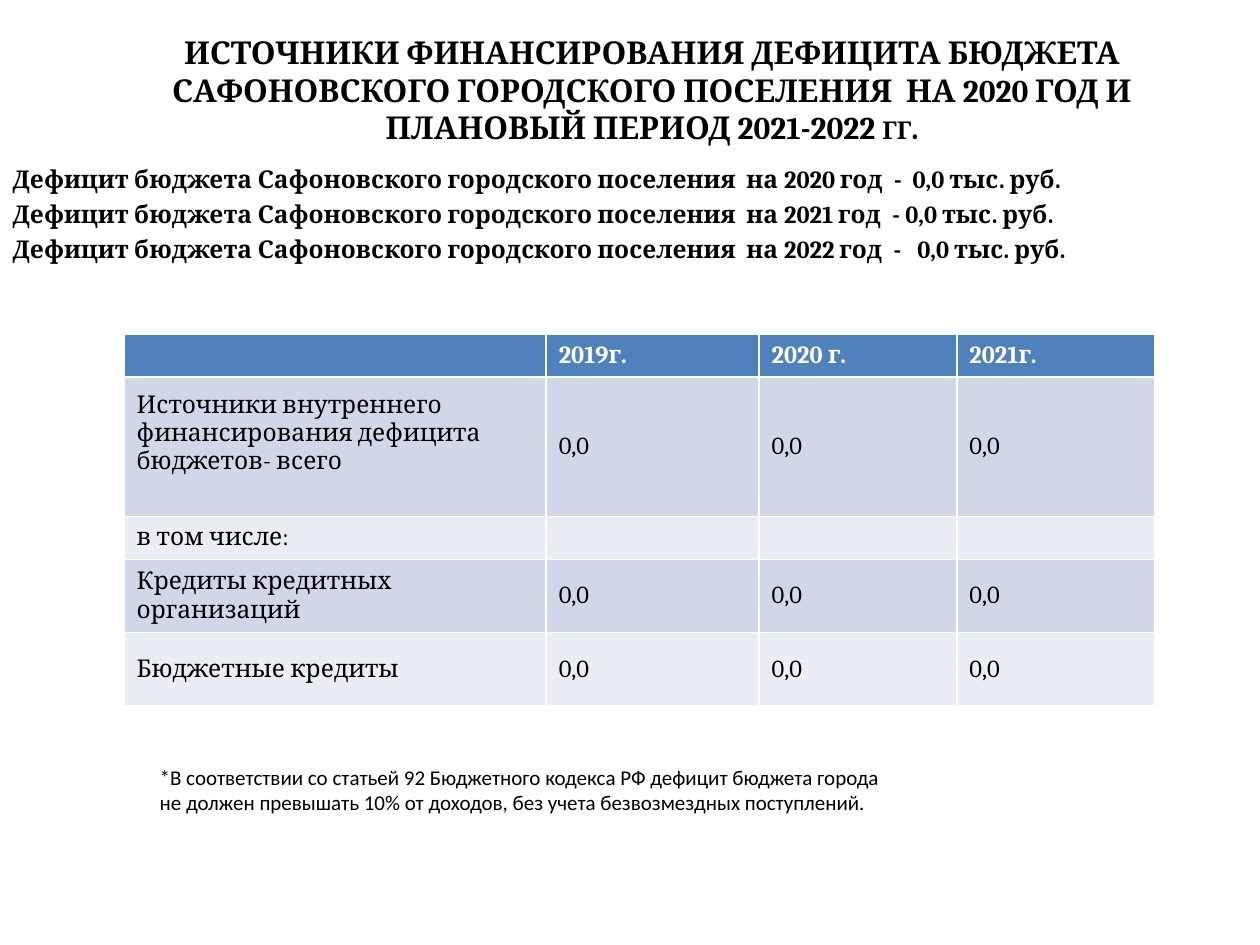
import pptx
import pptx.dml.color
import pptx.enum.text
import pptx.util
from lxml import etree

Pt = pptx.util.Pt
RGBColor = pptx.dml.color.RGBColor
ALIGN = pptx.enum.text.PP_ALIGN
ANCHOR = pptx.enum.text.MSO_ANCHOR
AUTO_SIZE = pptx.enum.text.MSO_AUTO_SIZE

# Colours
BLACK = RGBColor(0x00, 0x00, 0x00)
WHITE = RGBColor(0xFF, 0xFF, 0xFF)
HEADER_BLUE = RGBColor(0x4F, 0x81, 0xBD)
BANDS = [RGBColor(0xD0, 0xD8, 0xE8), RGBColor(0xE9, 0xED, 0xF4)]

# Content
TITLE = [
    ("ИСТОЧНИКИ ФИНАНСИРОВАНИЯ ДЕФИЦИТА БЮДЖЕТА САФОНОВСКОГО ГОРОДСКОГО "
     "ПОСЕЛЕНИЯ  НА 2020 ГОД И ПЛАНОВЫЙ ПЕРИОД 2021-2022 ", 18),
    ("ГГ", 14),
    (".", 18),
]
DEFICITS = [
    "Дефицит бюджета Сафоновского городского поселения  на 2020 год  -  0,0 тыс. руб.",
    "Дефицит бюджета Сафоновского городского поселения  на 2021 год  - 0,0 тыс. руб.",
    "Дефицит бюджета Сафоновского городского поселения  на 2022 год  -   0,0 тыс. руб.",
]
SOURCES = [
    ["", "2019г.", "2020 г.", "2021г."],
    ["Источники внутреннего финансирования дефицита бюджетов- всего", "0,0", "0,0", "0,0"],
    ["в том числе:", "", "", ""],
    ["Кредиты кредитных организаций", "0,0", "0,0", "0,0"],
    ["Бюджетные кредиты", "0,0", "0,0", "0,0"],
]
FOOTNOTE = [
    "*В соответствии со статьей 92 Бюджетного кодекса РФ дефицит бюджета города",
    "не должен превышать 10% от доходов, без учета безвозмездных поступлений.",
]
COLUMN_WIDTHS = [241.2, 121.7, 113, 113]
ROW_HEIGHTS = [24.5, 79.9, 24.5, 41.8, 41.8]


def add_text(paragraph, text, size=14, font="Cambria", color=BLACK, bold=False):
    """Add a formatted run; an empty text only sets the line height."""
    if not text:
        end = etree.SubElement(paragraph._p, pptx.oxml.ns.qn("a:endParaRPr"))
        end.set("sz", str(size * 100))
        return
    run = paragraph.add_run()
    run.text = text
    run.font.size = Pt(size)
    run.font.name = font
    run.font.bold = bold
    run.font.color.rgb = color


def place(shape, left, top, width, height):
    shape.left, shape.top = Pt(left), Pt(top)
    shape.width, shape.height = Pt(width), Pt(height)


def add_lines(frame, lines, **style):
    for index, line in enumerate(lines):
        paragraph = frame.paragraphs[0] if index == 0 else frame.add_paragraph()
        add_text(paragraph, line, **style)


presentation = pptx.Presentation()
presentation.slide_width, presentation.slide_height = Pt(720), Pt(540)
slide = presentation.slides.add_slide(presentation.slide_layouts[1])

# Title
title = slide.shapes.title
place(title, 70.6, 15.1, 604, 93.6)
title.text_frame.auto_size = AUTO_SIZE.NONE
title.text_frame.vertical_anchor = ANCHOR.TOP
heading = title.text_frame.paragraphs[0]
heading.alignment = ALIGN.CENTER
for text, size in TITLE:
    add_text(heading, text, size=size, bold=True)

# Deficit by year
body = slide.placeholders[1]
place(body, 0, 84.2, 686.2, 102.2)
body.text_frame.auto_size = AUTO_SIZE.NONE
body.text_frame.vertical_anchor = ANCHOR.BOTTOM
body.text_frame.margin_bottom = Pt(36)
add_lines(body.text_frame, DEFICITS, bold=True)
for paragraph in body.text_frame.paragraphs:
    paragraph.alignment = ALIGN.JUSTIFY
    paragraph.space_before = Pt(3)
    properties = paragraph._p.get_or_add_pPr()
    properties.set("marL", "0")
    properties.set("indent", "0")
    etree.SubElement(properties, pptx.oxml.ns.qn("a:buNone"))

# Table of financing sources
table = slide.shapes.add_table(
    len(SOURCES), len(COLUMN_WIDTHS), Pt(70.9), Pt(190.8),
    Pt(sum(COLUMN_WIDTHS)), Pt(sum(ROW_HEIGHTS))).table
for column, width in zip(table.columns, COLUMN_WIDTHS):
    column.width = Pt(width)
for row_index, (row, height) in enumerate(zip(SOURCES, ROW_HEIGHTS)):
    table.rows[row_index].height = Pt(height)
    is_header = row_index == 0
    for column_index, text in enumerate(row):
        cell = table.cell(row_index, column_index)
        cell.vertical_anchor = ANCHOR.MIDDLE
        cell.fill.solid()
        cell.fill.fore_color.rgb = HEADER_BLUE if is_header else BANDS[(row_index - 1) % 2]
        add_text(cell.text_frame.paragraphs[0], text,
                 color=WHITE if is_header else BLACK, bold=is_header)
# The total's label sits above the middle of its row
table.cell(1, 0).margin_bottom = Pt(19)

# Footnote
footnote = slide.shapes.add_textbox(Pt(84.2), Pt(433.4), Pt(434.2), Pt(36))
footnote.text_frame.word_wrap = False
add_lines(footnote.text_frame, FOOTNOTE, size=12, font="Calibri")

presentation.save("out.pptx")
